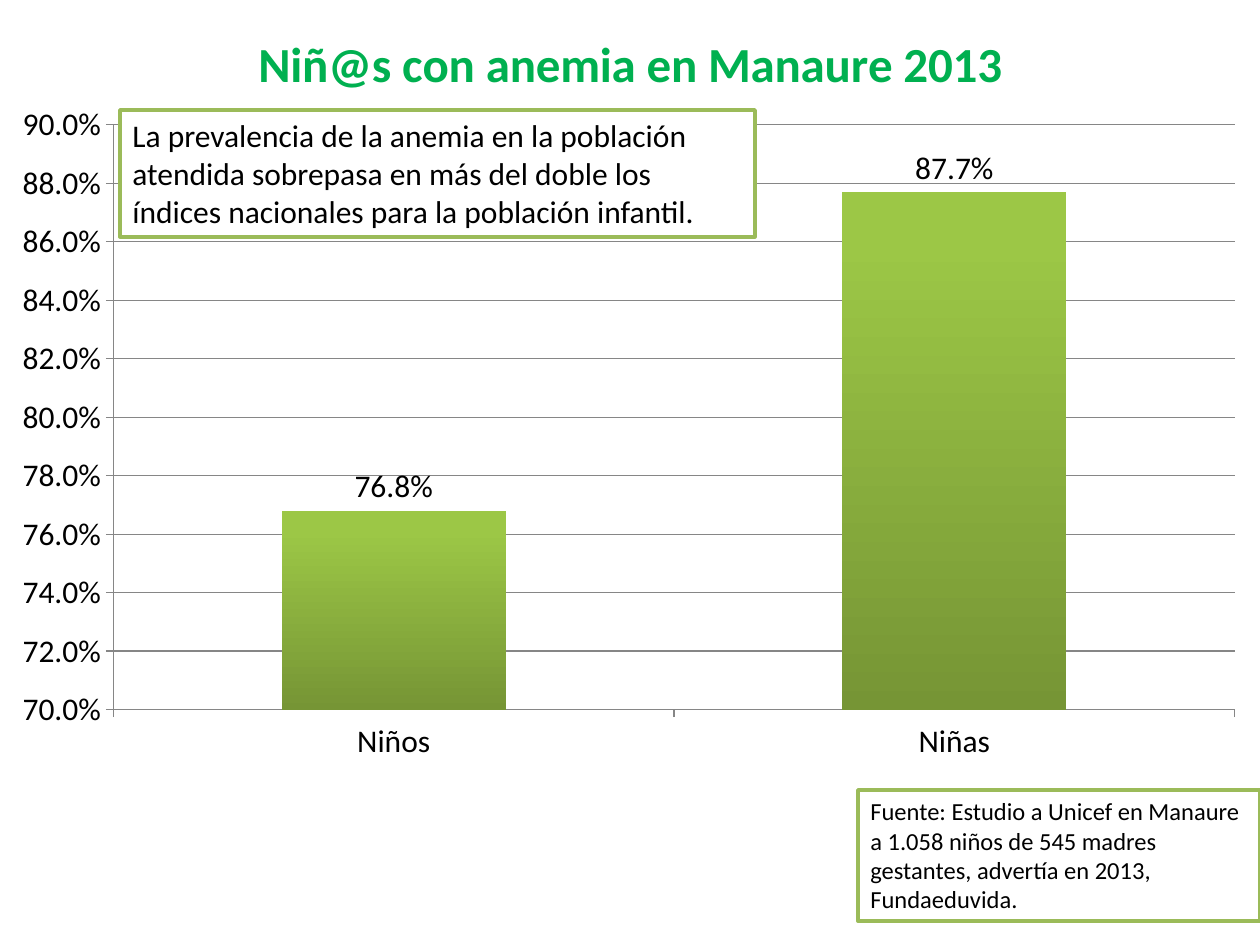
"""Build the slide on anemia among children in Manaure."""
import pptx
import pptx.chart.data
import pptx.dml.color
import pptx.enum.chart
import pptx.enum.shapes
import pptx.enum.text
import pptx.oxml
import pptx.oxml.ns
import pptx.util

FONT = "Calibri"
AXIS_GRAY = "868686"


def px(length):
    """Turn pixels into EMU."""
    return pptx.util.Emu(round(length * 914400 / 126))


def rgb(code):
    """Turn a hex string into a colour."""
    return pptx.dml.color.RGBColor.from_string(code)


def style_font(font, size, color="000000", bold=False):
    """Set face, size, colour and weight of a font."""
    font.name = FONT
    font.size = pptx.util.Pt(size)
    font.color.rgb = rgb(color)
    font.bold = bold


def fix_plot_area(chart, left, top, width, height):
    """Pin the inner plot area at fractions of the chart."""
    plot_area = chart._chartSpace.chart.plotArea
    for automatic in plot_area.findall(pptx.oxml.ns.qn("c:layout")):
        plot_area.remove(automatic)
    fractions = {"x": left, "y": top, "w": width, "h": height}
    values = "".join(f'<c:{key} val="{value}"/>' for key, value in fractions.items())
    plot_area.insert(0, pptx.oxml.parse_xml(
        f'<c:layout {pptx.oxml.ns.nsdecls("c")}><c:manualLayout>'
        '<c:layoutTarget val="inner"/><c:xMode val="edge"/><c:yMode val="edge"/>'
        f'{values}</c:manualLayout></c:layout>'))


def add_anemia_chart(slide, left, top, width, height):
    """Draw the column chart of anemia by sex."""
    prevalence = pptx.chart.data.CategoryChartData(number_format="0.0%")
    prevalence.categories = ["Niños", "Niñas"]
    prevalence.add_series("Series 1", [0.768, 0.877])
    chart = slide.shapes.add_chart(
        pptx.enum.chart.XL_CHART_TYPE.COLUMN_CLUSTERED,
        px(left), px(top), px(width), px(height), prevalence).chart
    style_font(chart.font, 18)
    chart.has_legend = False
    chart.has_title = True
    chart.chart_title.include_in_layout = False
    heading = chart.chart_title.text_frame
    heading.text = "Niñ@s con anemia en Manaure 2013"
    style_font(heading.paragraphs[0].font, 28, "00B050", True)
    fix_plot_area(chart, 0.09, 0.16, 0.89, 0.75)

    percent_axis = chart.value_axis
    percent_axis.minimum_scale = 0.7
    percent_axis.maximum_scale = 0.9
    percent_axis.major_unit = 0.02
    percent_axis.tick_labels.number_format = "0.0%"
    percent_axis.tick_labels.number_format_is_linked = False
    percent_axis.has_major_gridlines = True
    for ruled in (percent_axis, chart.category_axis, percent_axis.major_gridlines):
        ruled.format.line.color.rgb = rgb(AXIS_GRAY)
        ruled.format.line.width = pptx.util.Pt(0.75)
    for axis in (percent_axis, chart.category_axis):
        axis.major_tick_mark = pptx.enum.chart.XL_TICK_MARK.OUTSIDE

    columns = chart.plots[0]
    columns.gap_width = 150
    columns.vary_by_categories = False
    column_fill = columns.series[0].format.fill
    column_fill.gradient()
    column_fill.gradient_angle = 90
    for stop, color, position in zip(
            column_fill.gradient_stops, ("769535", "9CC746"), (0, 0.9)):
        stop.color.rgb = rgb(color)
        stop.position = position
    columns.has_data_labels = True
    labels = columns.data_labels
    labels.show_value = True
    labels.number_format = "0.0%"
    labels.number_format_is_linked = False
    labels.position = pptx.enum.chart.XL_LABEL_POSITION.OUTSIDE_END
    style_font(labels.font, 18)


def add_note(slide, left, top, width, height, text, size):
    """Draw a white note with a green border."""
    note = slide.shapes.add_shape(
        pptx.enum.shapes.MSO_SHAPE.RECTANGLE,
        px(left), px(top), px(width), px(height))
    note.shadow.inherit = False
    note.fill.solid()
    note.fill.fore_color.rgb = rgb("FFFFFF")
    note.line.color.rgb = rgb("9BBB59")
    note.line.width = pptx.util.Pt(2)
    frame = note.text_frame
    frame.word_wrap = True
    frame.auto_size = pptx.enum.text.MSO_AUTO_SIZE.SHAPE_TO_FIT_TEXT
    frame.vertical_anchor = pptx.enum.text.MSO_ANCHOR.TOP
    frame.text = text
    frame.paragraphs[0].alignment = pptx.enum.text.PP_ALIGN.LEFT
    style_font(frame.paragraphs[0].font, size)


def main():
    """Assemble and save the slide."""
    deck = pptx.Presentation()
    deck.slide_width, deck.slide_height = px(1260), px(945)
    slide = deck.slides.add_slide(deck.slide_layouts[6])
    add_anemia_chart(slide, 0, 0, 1260, 780)
    add_note(slide, 858, 790, 402, 131,
             "Fuente: Estudio a Unicef en Manaure a 1.058 niños de 545 madres "
             "gestantes, advertía en 2013, Fundaeduvida.", 14)
    add_note(slide, 120, 110, 635, 127,
             "La prevalencia de la anemia en la población atendida sobrepasa en más "
             "del doble los índices nacionales para la población infantil.", 18)
    deck.save("out.pptx")


if __name__ == "__main__":
    main()
